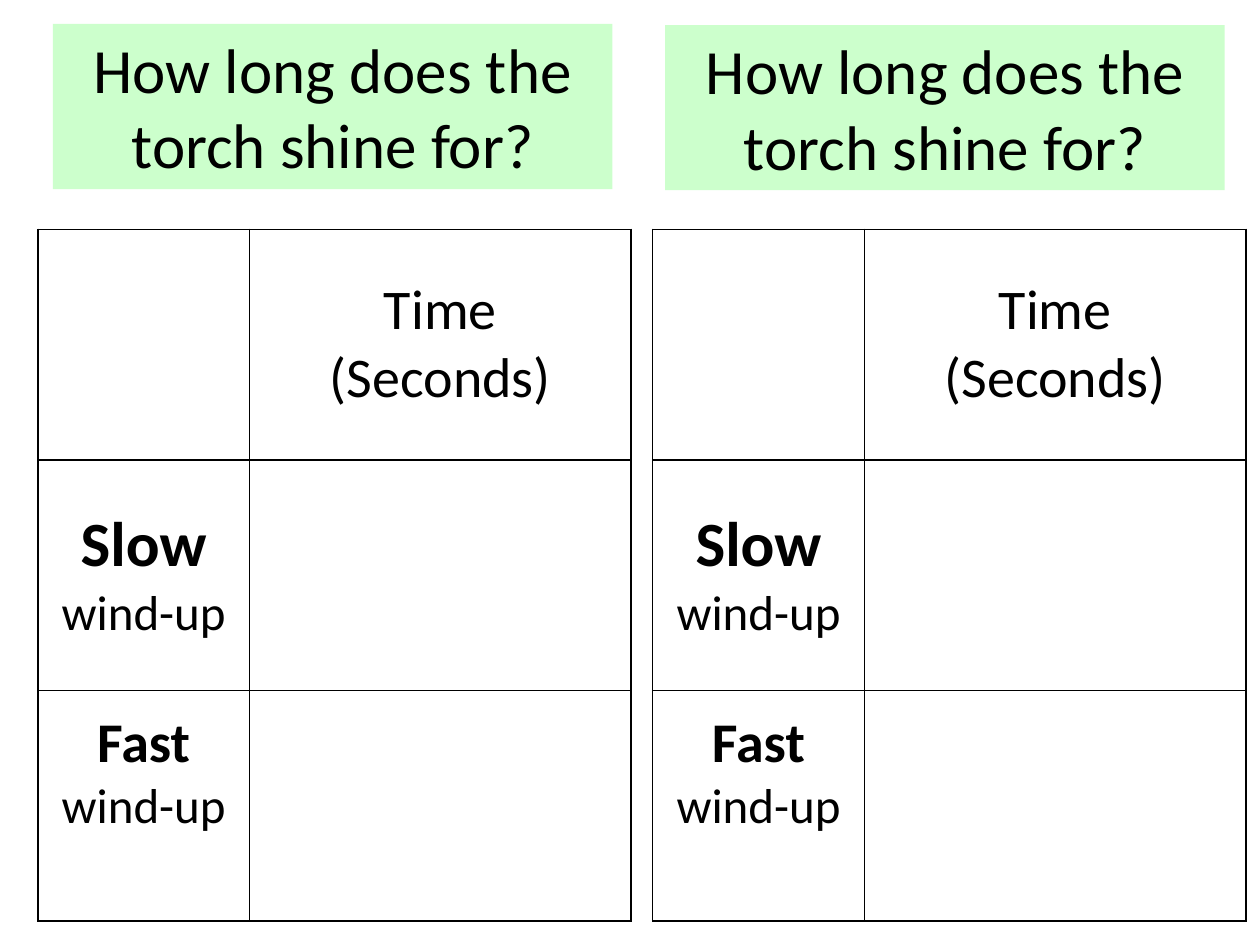
"""Build a slide with two side-by-side torch wind-up recording sheets."""

from dataclasses import dataclass

from lxml.etree import SubElement
from pptx import Presentation
from pptx.dml.color import RGBColor
from pptx.enum.text import MSO_ANCHOR as Anchor, MSO_AUTO_SIZE as AutoSize, PP_ALIGN as Align
from pptx.oxml.ns import qn
from pptx.util import Inches, Pt

COLORS = {"text": "000000", "border": "000000", "heading": "CCFFCC"}
FONT = "Calibri"
HEADING = "How long does the torch shine for?"
COLUMN_WIDTHS = (1.68, 3.03)
ROW_HEIGHT = 1.83
ROW_COUNT = 3
TABLE_TOP = 1.82


@dataclass(frozen=True)
class Line:
    text: str
    size: int
    bold: bool = False


@dataclass(frozen=True)
class Label:
    row: int
    column: int
    lines: tuple[Line, ...]
    bottom_margin: float = 0.05


@dataclass(frozen=True)
class Sheet:
    table_left: float
    heading_left: float
    heading_top: float


WIND_UP = Line("wind-up", 28)
LABELS = (
    Label(0, 1, (Line("Time", 32), Line("(Seconds)", 32))),
    Label(1, 0, (Line("Slow", 36, True), WIND_UP)),
    Label(2, 0, (Line("Fast", 32, True), WIND_UP), bottom_margin=0.57),
)
SHEETS = (Sheet(0.3, 0.42, 0.19), Sheet(5.18, 5.28, 0.2))


def write_lines(text_frame, lines: tuple[Line, ...]) -> None:
    """Write centred lines, one paragraph each."""
    text_frame.text = "\n".join(line.text for line in lines)
    for paragraph, line in zip(text_frame.paragraphs, lines):
        paragraph.alignment = Align.CENTER
        font = paragraph.font
        font.name, font.size, font.bold = FONT, Pt(line.size), line.bold
        font.color.rgb = RGBColor.from_string(COLORS["text"])


def format_heading(shape, sheet: Sheet) -> None:
    """Place a heading and give it its colour and text."""
    shape.left, shape.top = Inches(sheet.heading_left), Inches(sheet.heading_top)
    shape.width, shape.height = Inches(4.44), Inches(1.31)
    shape.fill.solid()
    shape.fill.fore_color.rgb = RGBColor.from_string(COLORS["heading"])
    text_frame = shape.text_frame
    text_frame.word_wrap = True
    text_frame.auto_size = AutoSize.SHAPE_TO_FIT_TEXT
    text_frame.vertical_anchor = Anchor.TOP
    write_lines(text_frame, (Line(HEADING, 36),))


def outline_cell(cell) -> None:
    """Draw all four borders of a cell and leave it unfilled."""
    properties = cell._tc.get_or_add_tcPr()
    for side in ("lnL", "lnR", "lnT", "lnB"):
        border = SubElement(properties, qn(f"a:{side}"), w=str(Pt(1)))
        fill = SubElement(border, qn("a:solidFill"))
        SubElement(fill, qn("a:srgbClr"), val=COLORS["border"])
    cell.fill.background()


def add_recording_table(slide, sheet: Sheet) -> None:
    """Add the table in which the times are recorded."""
    table = slide.shapes.add_table(
        ROW_COUNT, len(COLUMN_WIDTHS),
        Inches(sheet.table_left), Inches(TABLE_TOP),
        Inches(sum(COLUMN_WIDTHS)), Inches(ROW_HEIGHT * ROW_COUNT),
    ).table
    table.first_row = table.horz_banding = False
    for column, width in zip(table.columns, COLUMN_WIDTHS):
        column.width = Inches(width)
    for row in table.rows:
        row.height = Inches(ROW_HEIGHT)
    for cell in table.iter_cells():
        outline_cell(cell)
    for label in LABELS:
        cell = table.cell(label.row, label.column)
        cell.vertical_anchor = Anchor.MIDDLE
        cell.margin_bottom = Inches(label.bottom_margin)
        write_lines(cell.text_frame, label.lines)


def main() -> None:
    """Build and save the presentation."""
    presentation = Presentation()
    presentation.slide_width, presentation.slide_height = Inches(10), Inches(7.5)
    slide = presentation.slides.add_slide(presentation.slide_layouts.get_by_name("Title Only"))
    for sheet in SHEETS:
        add_recording_table(slide, sheet)
    second_heading = slide.shapes.add_textbox(0, 0, 0, 0)
    for heading, sheet in zip((slide.shapes.title, second_heading), SHEETS):
        format_heading(heading, sheet)
    presentation.save("out.pptx")


if __name__ == "__main__":
    main()
